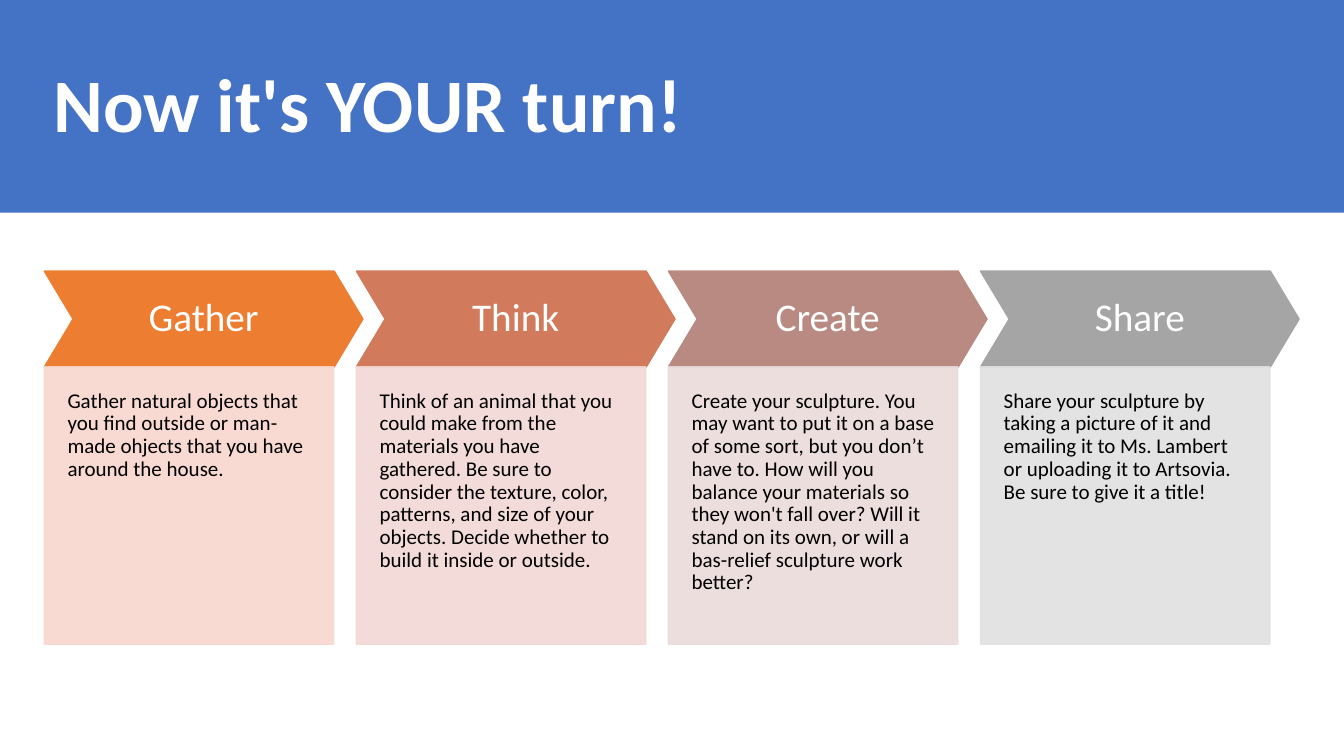
from lxml.etree import SubElement
from pptx import Presentation
from pptx.dml.color import RGBColor
from pptx.enum.shapes import MSO_SHAPE
from pptx.enum.text import MSO_ANCHOR, PP_ALIGN
from pptx.oxml.ns import qn
from pptx.util import Inches, Pt

COLORS = {
    "banner": "4472C4",
    "light": "FFFFFF",
    "dark": "000000",
    "Gather": ("ED7D31", "F8D7CE"),
    "Think": ("D17B5C", "F1D8D4"),
    "Create": ("B98A82", "E9DBDA"),
    "Share": ("A5A5A5", "E1E1E1"),
}
STEPS = {
    "Gather": "Gather natural objects that you find outside or man-made ohjects that you have around the house.",
    "Think": "Think of an animal that you could make from the materials you have gathered. Be sure to consider the texture, color, patterns, and size of your objects. Decide whether to build it inside or outside.",
    "Create": "Create your sculpture. You may want to put it on a base of some sort, but you don’t have to. How will you balance your materials so they won't fall over? Will it stand on its own, or will a bas-relief sculpture work better?",
    "Share": "Share your sculpture by taking a picture of it and emailing it to Ms. Lambert or uploading it to Artsovia. Be sure to give it a title!",
}
LEFT, PITCH = 0.44, 3.095
HEAD_TOP, HEAD_WIDTH, HEAD_HEIGHT = 2.69, 3.16, 0.95
BODY_WIDTH, BODY_HEIGHT = 2.87, 2.75

deck = Presentation()
deck.slide_width, deck.slide_height = Inches(13.33), Inches(7.5)
slide = deck.slides.add_slide(deck.slide_layouts[6])


def add_block(preset, left, top, width, height, color, outlined=True):
    block = slide.shapes.add_shape(preset, Inches(left), Inches(top), Inches(width), Inches(height))
    block.shadow.inherit = False
    block.fill.solid()
    block.fill.fore_color.rgb = RGBColor.from_string(color)
    if outlined:
        block.line.color.rgb = RGBColor.from_string(color)
        block.line.width = Pt(1)
    else:
        block.line.fill.background()
    return block


def write(block, text, size, color, anchor, align, margins, bold=False):
    frame = block.text_frame
    frame.word_wrap = True
    frame.vertical_anchor = anchor
    frame.margin_left, frame.margin_top, frame.margin_right, frame.margin_bottom = map(Inches, margins)
    frame.text = text
    paragraph = frame.paragraphs[0]
    paragraph.alignment = align
    paragraph.line_spacing = 0.9
    font = paragraph.runs[0].font
    font.name, font.size, font.bold = "Calibri", Pt(size), bold
    font.color.rgb = RGBColor.from_string(color)


add_block(MSO_SHAPE.RECTANGLE, 0, -0.01, 13.33, 2.12, COLORS["banner"], outlined=False)
title = slide.shapes.add_textbox(Inches(0.43), Inches(0.35), Inches(12.48), Inches(1.45))
write(title, "Now it's YOUR turn!", 54, COLORS["light"], MSO_ANCHOR.MIDDLE, PP_ALIGN.LEFT,
      (0.1, 0.05, 0.1, 0.05), bold=True)

for column, (step, instructions) in enumerate(STEPS.items()):
    left = LEFT + column * PITCH
    head_color, body_color = COLORS[step]

    heading = add_block(MSO_SHAPE.CHEVRON, left, HEAD_TOP, HEAD_WIDTH, HEAD_HEIGHT, head_color)
    heading.adjustments[0] = 0.3
    write(heading, step, 28, COLORS["light"], MSO_ANCHOR.MIDDLE, PP_ALIGN.CENTER, (0.12,) * 4)

    body = add_block(MSO_SHAPE.RECTANGLE, left, HEAD_TOP + HEAD_HEIGHT, BODY_WIDTH, BODY_HEIGHT, body_color)
    for tint in body.element.spPr.iter(qn("a:srgbClr")):
        SubElement(tint, qn("a:alpha"), val="90000")
    write(body, instructions, 15, COLORS["dark"], MSO_ANCHOR.TOP, PP_ALIGN.LEFT, (0.23, 0.23, 0.23, 0.45))

deck.save("out.pptx")
